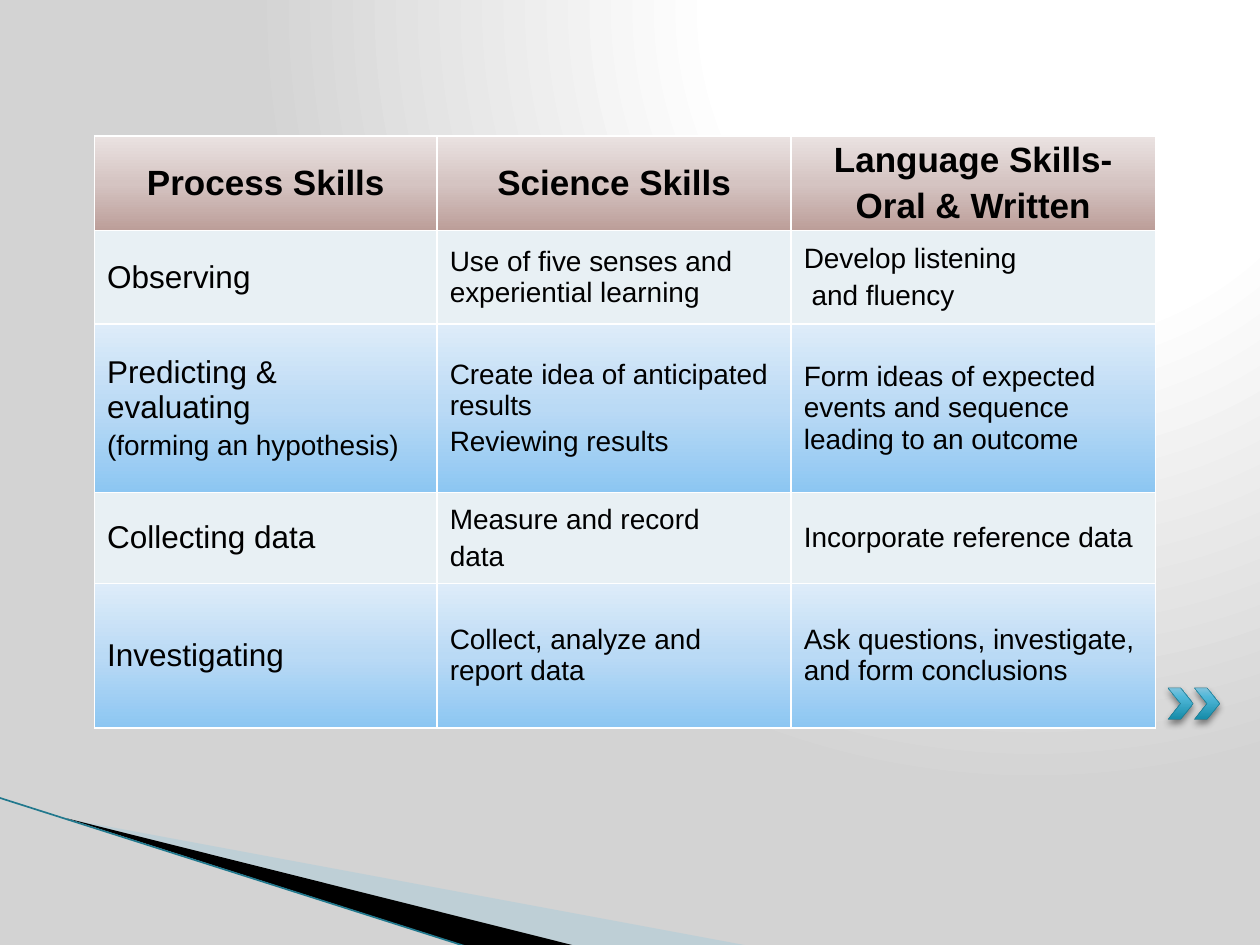
from lxml.etree import SubElement
from pptx import Presentation
from pptx.dml.color import RGBColor
from pptx.enum.shapes import MSO_CONNECTOR, MSO_SHAPE
from pptx.enum.text import MSO_ANCHOR, PP_ALIGN
from pptx.oxml.ns import qn
from pptx.util import Inches, Pt

COLORS = {
    "text": "000000", "border": "FFFFFF", "plain": "E8F0F4",
    "wedge": "A0CBDC", "dark": "000000", "edge": "21788D", "shadow": "000000",
}
GRADIENTS = {
    "page": [(0, "FFFFFF"), (40, "FFFFFF"), (100, "D3D3D3")],
    "header": [(0, "BC9E99"), (50, "D5C4C2"), (100, "EAE2E1")],
    "band": [(0, "8CC6F2"), (50, "BADAF5"), (100, "DEECF9")],
    "chevron": [(0, "158BA8"), (72, "51B8D9"), (100, "80C3DD")],
}
HEAD, LABEL, BODY = 20, 18, 16  # text sizes

# Each cell is a list of (text, size) paragraphs
ROWS = [
    [[("Process Skills", HEAD)], [("Science Skills", HEAD)],
     [("Language Skills-", HEAD), ("Oral & Written", HEAD)]],
    [[("Observing", LABEL)],
     [("Use of five senses and experiential learning", BODY)],
     [("Develop listening", BODY), (" and fluency", BODY)]],
    [[("Predicting & evaluating", LABEL), ("(forming an hypothesis)", BODY)],
     [("Create idea of anticipated results", BODY), ("Reviewing results", BODY)],
     [("Form ideas of expected events and sequence leading to an outcome", BODY)]],
    [[("Collecting data", LABEL)],
     [("Measure and record", BODY), ("data", BODY)],
     [("Incorporate reference data", BODY)]],
    [[("Investigating", LABEL)],
     [("Collect, analyze and report data", BODY)],
     [("Ask questions, investigate, and form conclusions", BODY)]],
]
ROW_FILLS = ["header", "plain", "band", "plain", "band"]
COL_WIDTHS = [27.2, 28.1, 28.9]
ROW_HEIGHTS = [10, 9.87, 17.87, 9.6, 15.33]


def add(parent, tag, **attrs):
    return SubElement(parent, qn(tag), {k: str(v) for k, v in attrs.items()})


def rgb(name):
    return RGBColor.from_string(COLORS[name])


class SlideBuilder:
    """Holds the style and the current slide; lengths are percent of the slide."""

    font = "Arial"

    def __init__(self, prs):
        self.width, self.height = prs.slide_width, prs.slide_height
        self.s = prs.slides.add_slide(prs.slide_layouts[6])

    def x(self, share):
        return round(self.width * share / 100)

    def y(self, share):
        return round(self.height * share / 100)

    def gradient(self, fill, element, name, center=None):
        fill.gradient()
        grad = element.find(".//" + qn("a:gradFill"))
        for child in list(grad):
            grad.remove(child)
        stops = add(grad, "a:gsLst")
        for pos, color in GRADIENTS[name]:
            add(add(stops, "a:gs", pos=pos * 1000), "a:srgbClr", val=color)
        if center:
            add(add(grad, "a:path", path="circle"), "a:fillToRect", **center)
        else:
            add(grad, "a:lin", ang=270 * 60000, scaled=0)

    def background(self):
        self.gradient(self.s.background.fill, self.s.element, "page",
                      dict(l=65000, t=0, r=0, b=98000))

    def polygon(self, points, color, alpha=100):
        pts = [(self.x(px), self.y(py)) for px, py in points]
        builder = self.s.shapes.build_freeform(*pts[0])
        builder.add_line_segments(pts[1:], close=True)
        sp = builder.convert_to_shape()
        sp.shadow.inherit = False
        sp.fill.solid()
        sp.fill.fore_color.rgb = rgb(color)
        sp.line.fill.background()
        if alpha < 100:
            add(sp.element.spPr.find(".//" + qn("a:srgbClr")), "a:alpha", val=alpha * 1000)

    def line(self, x1, y1, x2, y2, color, weight):
        cx = self.s.shapes.add_connector(
            MSO_CONNECTOR.STRAIGHT, self.x(x1), self.y(y1), self.x(x2), self.y(y2))
        cx.line.color.rgb = rgb(color)
        cx.line.width = Pt(weight)
        add(cx.element.spPr, "a:effectLst")

    def chevron(self, left, top, width, height):
        sp = self.s.shapes.add_shape(
            MSO_SHAPE.CHEVRON, self.x(left), self.y(top), self.x(width), self.y(height))
        self.gradient(sp.fill, sp.element.spPr, "chevron")
        sp.line.color.rgb = rgb("edge")
        sp.line.width = Pt(0.25)
        sp.shadow.inherit = False
        shadow = add(sp.element.spPr.find(qn("a:effectLst")), "a:outerShdw",
                     blurRad=Pt(4), dist=Pt(2), dir=90 * 60000, rotWithShape=0)
        add(add(shadow, "a:srgbClr", val=COLORS["shadow"]), "a:alpha", val=46000)

    def table(self, left, top):
        frame = self.s.shapes.add_table(
            len(ROWS), len(COL_WIDTHS), self.x(left), self.y(top),
            self.x(sum(COL_WIDTHS)), self.y(sum(ROW_HEIGHTS)))
        table = frame.table
        table.first_row = table.horz_banding = False
        for col, width in zip(table.columns, COL_WIDTHS):
            col.width = self.x(width)
        for r, (row, height) in enumerate(zip(table.rows, ROW_HEIGHTS)):
            row.height = self.y(height)
            for cell, paragraphs in zip(row.cells, ROWS[r]):
                self.cell(cell, paragraphs, ROW_FILLS[r])

    def cell(self, cell, paragraphs, fill):
        cell.vertical_anchor = MSO_ANCHOR.MIDDLE
        cell.margin_left = cell.margin_right = Inches(0.1)
        cell.margin_top = cell.margin_bottom = Inches(0.02)
        # Borders come before the fill in the cell properties
        tc_pr = cell._tc.get_or_add_tcPr()
        for side in "LRTB":
            ln = add(tc_pr, "a:ln" + side, w=Pt(1))
            add(add(ln, "a:solidFill"), "a:srgbClr", val=COLORS["border"])
        if fill in GRADIENTS:
            self.gradient(cell.fill, tc_pr, fill)
        else:
            cell.fill.solid()
            cell.fill.fore_color.rgb = rgb(fill)
        # Text
        tf = cell.text_frame
        tf.text = "\n".join(text for text, _ in paragraphs)
        for i, (p, (_, size)) in enumerate(zip(tf.paragraphs, paragraphs)):
            p.alignment = PP_ALIGN.CENTER if fill == "header" else PP_ALIGN.LEFT
            if i:
                p.space_before = Pt(size * 0.2)
            for r in p.runs:
                r.font.name = self.font
                r.font.size = Pt(size)
                r.font.bold = fill == "header"
                r.font.color.rgb = rgb("text")


def main():
    prs = Presentation()
    prs.slide_width, prs.slide_height = Inches(10), Inches(7.5)
    page = SlideBuilder(prs)
    page.background()

    # Corner wedges and their edge
    page.polygon([(5.5, 86.7), (59.5, 100.1), (45.6, 100.1)], "wedge", alpha=40)
    page.polygon([(5.3, 86.6), (45.7, 100.1), (37.2, 100.2)], "dark")
    page.line(-0.1, 84.4, 37.1, 100.2, "edge", 0.95)

    # Pair of chevrons
    for i in (1, 0):
        page.chevron(92.7 + 2.1 * i, 72.8, 2, 3.33)

    # Skills table
    page.table(7.5, 14.4)
    prs.save("out.pptx")


if __name__ == "__main__":
    main()
